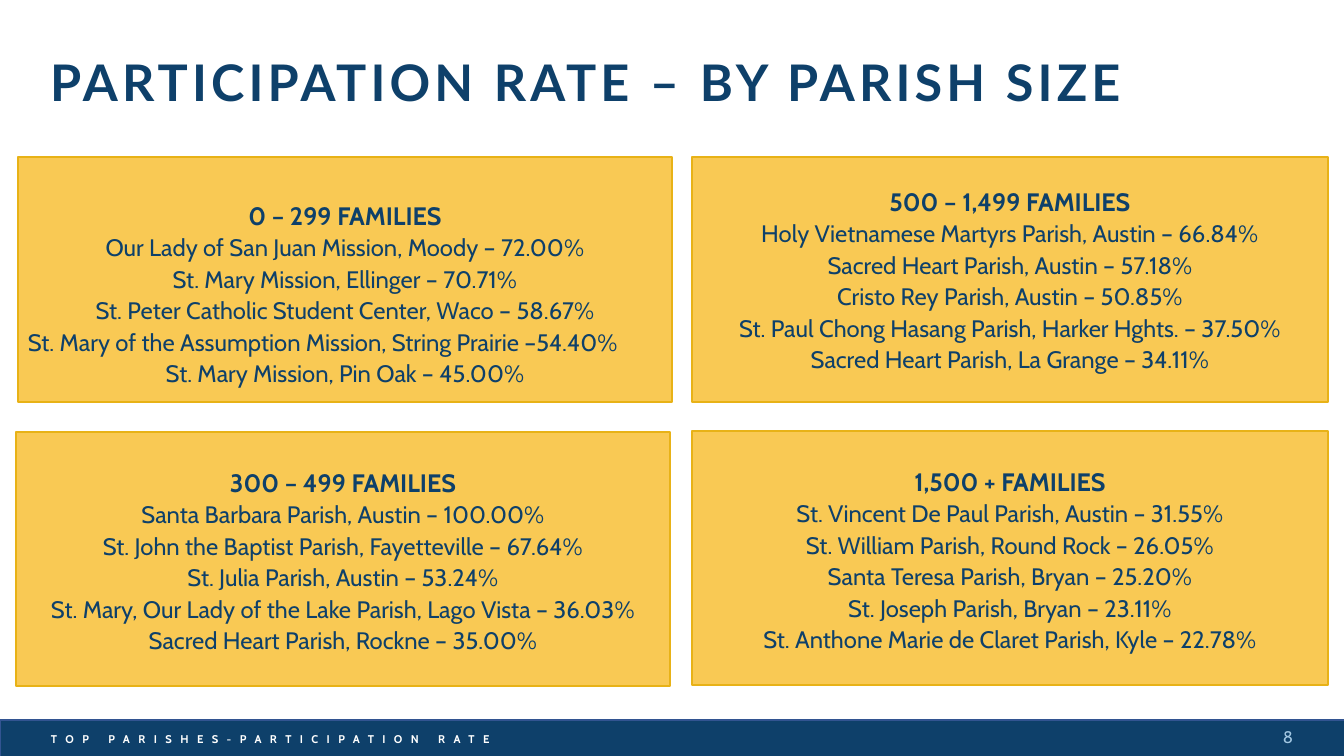
from dataclasses import dataclass

from pptx import Presentation
from pptx.dml.color import RGBColor
from pptx.enum.shapes import MSO_SHAPE
from pptx.enum.text import MSO_ANCHOR, PP_ALIGN
from pptx.util import Emu, Pt

NAVY, GOLD, AMBER = "0E406A", "F9C954", "E8B217"
LEFT, MID, RIGHT = PP_ALIGN.LEFT, PP_ALIGN.CENTER, PP_ALIGN.RIGHT


@dataclass(frozen=True)
class Box:
    x: int
    y: int
    w: int
    h: int


@dataclass(frozen=True)
class Panel:
    box: Box
    inset: int  # gap above the heading
    head: str
    rows: tuple[str, ...]
    flush: int = -1  # index of the row set to the left


PANELS = (
    Panel(Box(18, 157, 654, 245), 43, "0 – 299 FAMILIES", (
        "Our Lady of San Juan Mission, Moody – 72.00%",
        "St. Mary Mission, Ellinger – 70.71%",
        "St. Peter Catholic Student Center, Waco – 58.67%",
        "St. Mary of the Assumption Mission, String Prairie –54.40%",
        "St. Mary Mission, Pin Oak – 45.00%",
    ), flush=3),
    Panel(Box(16, 432, 654, 254), 35, "300 – 499 FAMILIES", (
        "Santa Barbara Parish, Austin – 100.00%",
        "St. John the Baptist Parish, Fayetteville – 67.64%",
        "St. Julia Parish, Austin – 53.24%",
        "St. Mary, Our Lady of the Lake Parish, Lago Vista – 36.03%",
        "Sacred Heart Parish, Rockne – 35.00%",
    )),
    Panel(Box(692, 157, 636, 245), 29, "500 – 1,499 FAMILIES", (
        "Holy Vietnamese Martyrs Parish, Austin – 66.84%",
        "Sacred Heart Parish, Austin – 57.18%",
        "Cristo Rey Parish, Austin – 50.85%",
        "St. Paul Chong Hasang Parish, Harker Hghts. – 37.50%",
        "Sacred Heart Parish, La Grange – 34.11%",
    )),
    Panel(Box(692, 431, 636, 254), 35, "1,500 + FAMILIES", (
        "St. Vincent De Paul Parish, Austin – 31.55%",
        "St. William Parish, Round Rock – 26.05%",
        "Santa Teresa Parish, Bryan – 25.20%",
        "St. Joseph Parish, Bryan – 23.11%",
        "St. Anthone Marie de Claret Parish, Kyle – 22.78%",
    )),
)


def px(n: int) -> Emu:
    return Emu(round(n * 914400 / 100.8))


def rgb(code: str) -> RGBColor:
    return RGBColor.from_string(code)


def place(box: Box) -> tuple[Emu, ...]:
    return px(box.x), px(box.y), px(box.w), px(box.h)


def write(para, text: str, size: int, color: str = NAVY, bold: bool = False,
          align=LEFT, face: str = "Cabin", track: int = 0) -> None:
    """Fill one paragraph; track is the letter spacing in points."""
    run = para.add_run()
    run.text = text
    para.alignment = align
    font = para.font
    font.name, font.size, font.bold = face, Pt(size), bold
    font.color.rgb = rgb(color)
    if track:
        run._r.get_or_add_rPr().set("spc", str(track * 100))


def add_rect(slide, box: Box, fill: str, line: str):
    rect = slide.shapes.add_shape(MSO_SHAPE.RECTANGLE, *place(box))
    rect.shadow.inherit = False
    rect.fill.solid()
    rect.fill.fore_color.rgb = rgb(fill)
    rect.line.color.rgb = rgb(line)
    rect.line.width = Pt(1)
    return rect


def add_label(slide, box: Box, anchor):
    frame = slide.shapes.add_textbox(*place(box)).text_frame
    frame.word_wrap = True
    frame.vertical_anchor = anchor
    return frame.paragraphs[0]


def add_title(slide, text: str) -> None:
    title = slide.shapes.title
    title.left, title.top, title.width, title.height = place(Box(40, 43, 1264, 84))
    frame = title.text_frame
    frame.vertical_anchor = MSO_ANCHOR.MIDDLE
    para = frame.paragraphs[0]
    para.line_spacing = 0.9
    write(para, text, 36, bold=True, face="Lato", track=3)


def add_panel(slide, panel: Panel) -> None:
    frame = add_rect(slide, panel.box, GOLD, AMBER).text_frame
    frame.word_wrap = True
    frame.vertical_anchor = MSO_ANCHOR.TOP
    frame.margin_top = px(panel.inset)
    write(frame.paragraphs[0], panel.head, 18, bold=True, align=MID)
    for i, row in enumerate(panel.rows):
        write(frame.add_paragraph(), row, 17,
              align=LEFT if i == panel.flush else MID)
    for para in frame.paragraphs:
        para.space_after = Pt(2)


def add_footer(slide) -> None:
    add_rect(slide, Box(0, 720, 1347, 39), NAVY, "325491")
    page = add_label(slide, Box(1102, 717, 201, 40), MSO_ANCHOR.MIDDLE)
    write(page, "8", 12, "A2C7E2", align=RIGHT)
    note = add_label(slide, Box(41, 727, 486, 24), MSO_ANCHOR.TOP)
    write(note, "TOP PARISHES-PARTICIPATION RATE", 8, "FFFFFF", bold=True, track=6)


def main() -> None:
    deck = Presentation()
    deck.slide_width, deck.slide_height = px(1344), px(756)
    slide = deck.slides.add_slide(deck.slide_layouts.get_by_name("Title Only"))
    add_title(slide, "PARTICIPATION RATE – BY PARISH SIZE")
    for panel in PANELS:
        add_panel(slide, panel)
    add_footer(slide)
    deck.save("out.pptx")


if __name__ == "__main__":
    main()
